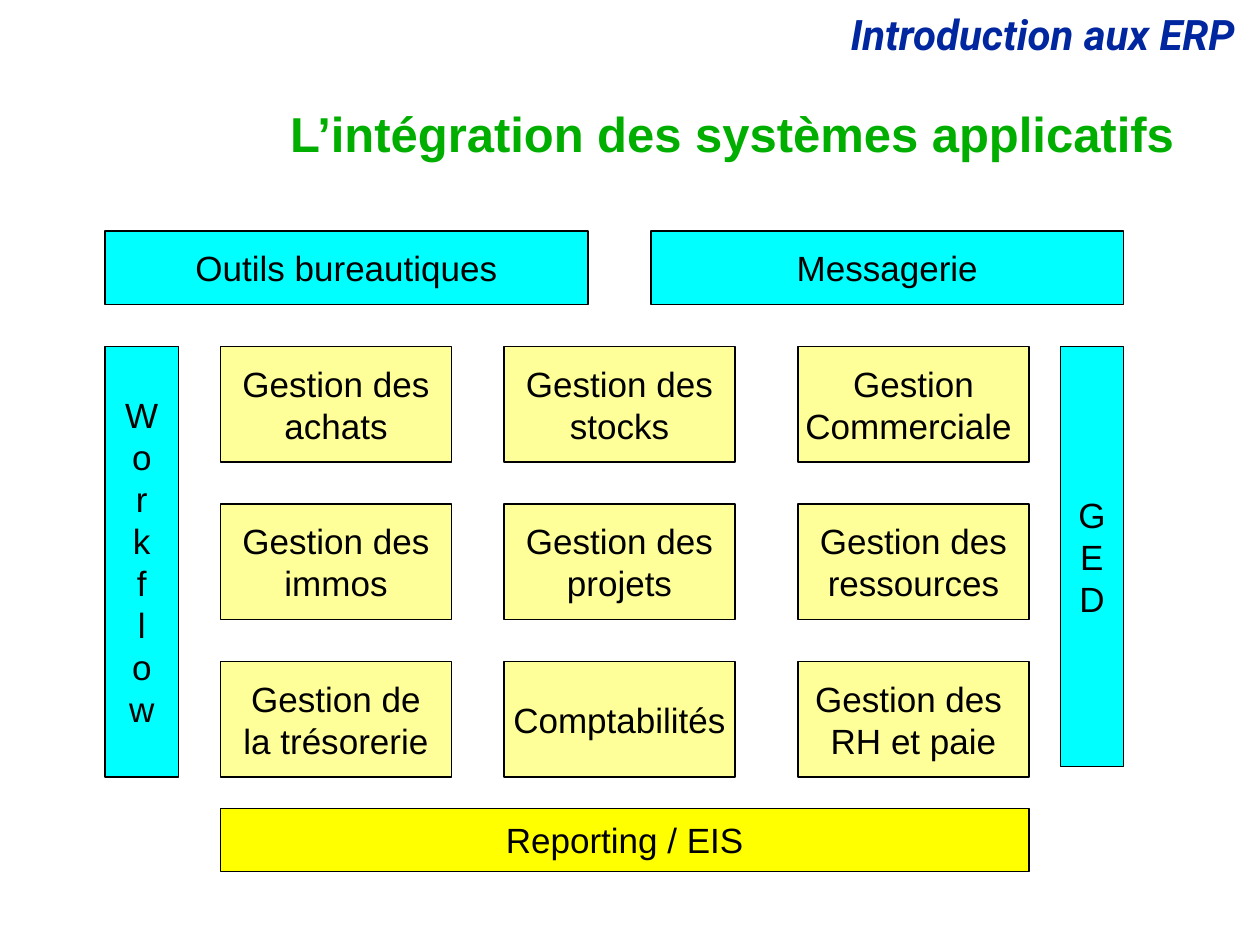
"""Build the slide on the integration of application systems in an ERP."""
from dataclasses import dataclass

import pptx
import pptx.dml.color
import pptx.enum.shapes
import pptx.enum.text
import pptx.util

UNITS_PER_INCH = 12
CYAN, PALE_YELLOW, YELLOW = "00FFFF", "FFFF99", "FFFF00"
BLACK, NAVY, GREEN = "000000", "00279F", "00AE00"
ALIGN = pptx.enum.text.PP_ALIGN
ANCHOR = pptx.enum.text.MSO_ANCHOR
MODULE_COLUMNS = (21, 48, 76)
FIRST_MODULE_ROW, MODULE_ROW_STEP = 33, 15
MODULE_WIDTH, MODULE_HEIGHT = 22, 11
MODULES = (
    ("Gestion des\nachats", "Gestion des\nstocks", "Gestion\nCommerciale "),
    ("Gestion des\nimmos", "Gestion des\nprojets", "Gestion des\nressources"),
    ("Gestion de\nla trésorerie", "Comptabilités", "Gestion des \vRH et paie"),
)


@dataclass(frozen=True)
class Block:
    label: str
    column: int
    row: int
    columns: int
    rows: int
    fill: str


TOOLS = (
    Block("Outils bureautiques", 10, 22, 46, 7, CYAN),
    Block("Messagerie", 62, 22, 45, 7, CYAN),
    Block("\n".join("Workflow"), 10, 33, 7, 41, CYAN),
    Block("\n".join("GED"), 101, 33, 6, 40, CYAN),
    Block("Reporting / EIS", 21, 77, 77, 6, YELLOW),
)


def units(count: float) -> int:
    return pptx.util.Inches(count / UNITS_PER_INCH)


def color(value: str) -> pptx.dml.color.RGBColor:
    return pptx.dml.color.RGBColor.from_string(value)


def write(frame, text: str, size: int, ink: str, align, font: str = "Arial",
          bold: bool = False, italic: bool = False, spacing: float = 1.0) -> None:
    frame.text = text
    for paragraph in frame.paragraphs:
        paragraph.alignment = align
        paragraph.line_spacing = spacing
        paragraph.font.name = font
        paragraph.font.size = pptx.util.Pt(size)
        paragraph.font.bold = bold
        paragraph.font.italic = italic
        paragraph.font.color.rgb = color(ink)


def draw_block(slide, block: Block) -> None:
    box = slide.shapes.add_shape(
        pptx.enum.shapes.MSO_SHAPE.RECTANGLE,
        units(block.column), units(block.row), units(block.columns), units(block.rows))
    box.shadow.inherit = False
    box.fill.solid()
    box.fill.fore_color.rgb = color(block.fill)
    box.line.color.rgb = color(BLACK)
    box.line.width = pptx.util.Pt(1)
    box.text_frame.word_wrap = False
    box.text_frame.vertical_anchor = ANCHOR.MIDDLE
    write(box.text_frame, block.label, 20, BLACK, ALIGN.CENTER)


def draw_headings(slide) -> None:
    course = slide.shapes.add_textbox(
        pptx.util.Inches(2.32), pptx.util.Inches(0.06),
        pptx.util.Inches(7.58), pptx.util.Inches(0.46))
    course.text_frame.word_wrap = True
    write(course.text_frame, "Introduction aux ERP", 24, NAVY, ALIGN.RIGHT,
          font="Roboto", bold=True, italic=True, spacing=0.9)
    title = slide.shapes.title
    title.left, title.top = units(18), units(10)
    title.width, title.height = units(95), units(6)
    title.text_frame.auto_size = pptx.enum.text.MSO_AUTO_SIZE.NONE
    title.text_frame.vertical_anchor = ANCHOR.MIDDLE
    write(title.text_frame, "L’intégration des systèmes applicatifs", 28, GREEN,
          ALIGN.RIGHT, bold=True, spacing=0.9)


def main() -> None:
    presentation = pptx.Presentation()
    presentation.slide_width = units(120)
    presentation.slide_height = units(90)
    slide = presentation.slides.add_slide(presentation.slide_layouts[5])
    draw_headings(slide)
    for tool in TOOLS:
        draw_block(slide, tool)
    for index, labels in enumerate(MODULES):
        row = FIRST_MODULE_ROW + index * MODULE_ROW_STEP
        for column, label in zip(MODULE_COLUMNS, labels):
            draw_block(slide, Block(label, column, row, MODULE_WIDTH,
                                    MODULE_HEIGHT, PALE_YELLOW))
    presentation.save("out.pptx")


if __name__ == "__main__":
    main()
